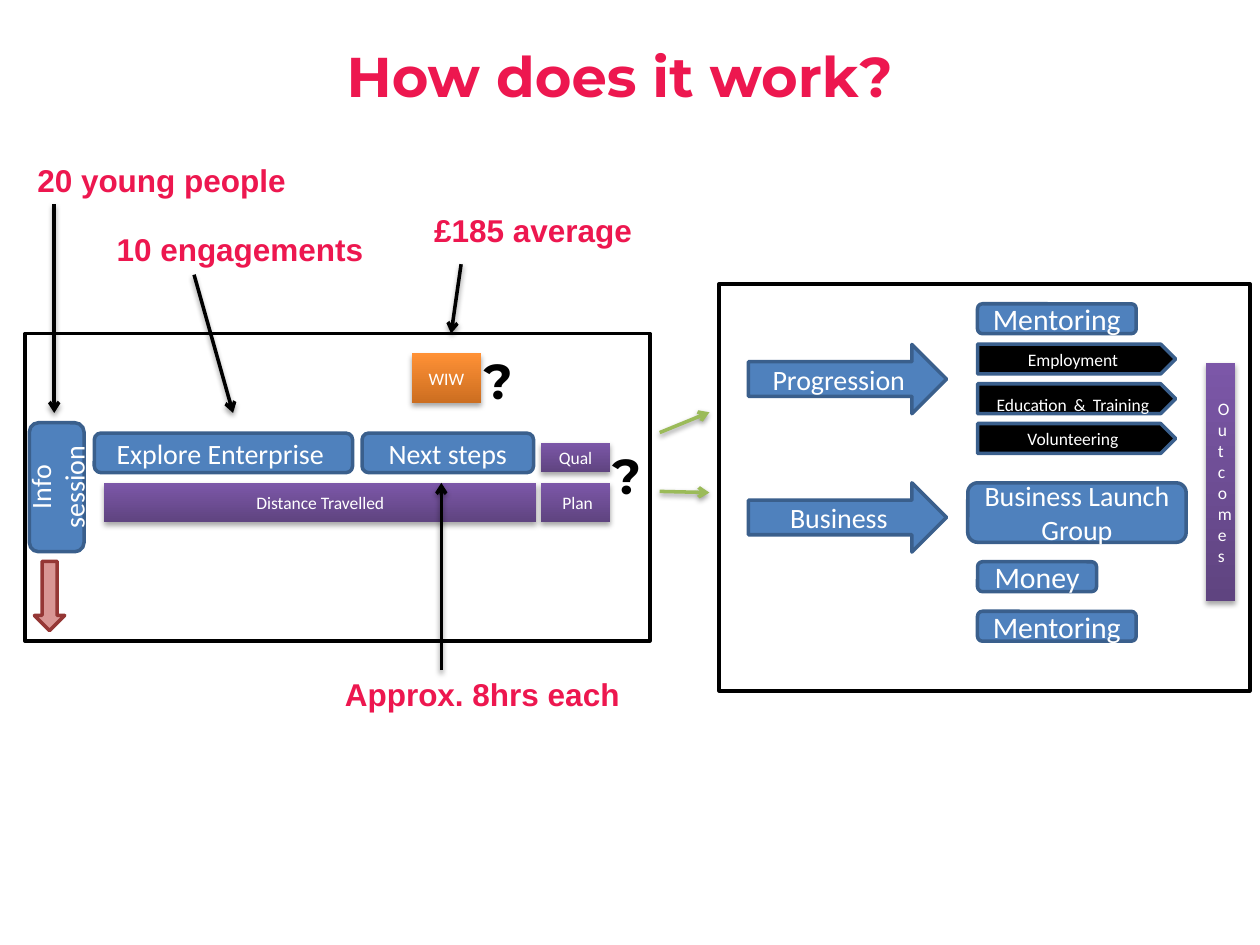
from lxml.etree import SubElement
from pptx import Presentation
from pptx.dml.color import RGBColor
from pptx.enum.shapes import MSO_CONNECTOR, MSO_SHAPE
from pptx.enum.text import MSO_ANCHOR, PP_ALIGN
from pptx.oxml.ns import qn
from pptx.util import Pt

COLOURS = {
    "white": "FFFFFF", "black": "000000", "pink": "ED174F",
    "blue": "4F81BD", "blue edge": "3A5F8C", "green": "9BBB59",
    "red": "D99694", "red edge": "953735",
    "purple": "7C57A8", "purple dark": "5F4480",
    "orange": "FF9136", "orange dark": "CC6E20",
}


def rgb(name):
    return RGBColor.from_string(COLOURS[name])


def format_text(frame, size, font, colour, bold=False, align=PP_ALIGN.CENTER):
    frame.word_wrap = True
    for paragraph in frame.paragraphs:
        paragraph.alignment = align
        for run in paragraph.runs:
            run.font.size = Pt(size)
            run.font.name = font
            run.font.bold = bold
            run.font.color.rgb = rgb(colour)


def add_shadow(element, opacity, distance):
    effects = SubElement(element.spPr, qn("a:effectLst"))
    shadow = SubElement(effects, qn("a:outerShdw"), blurRad=str(Pt(3.1)),
                        dist=str(Pt(distance)), dir="5400000", rotWithShape="0")
    black = SubElement(shadow, qn("a:srgbClr"), val=COLOURS["black"])
    SubElement(black, qn("a:alpha"), val=str(opacity * 1000))


def add_block(slide, preset, box, text="", size=16, fill="blue", edge="blue edge"):
    """Solid shape with an outline and centred white text."""
    block = slide.shapes.add_shape(preset, *map(Pt, box))
    block.shadow.inherit = False
    block.fill.solid()
    block.fill.fore_color.rgb = rgb(fill)
    block.line.color.rgb = rgb(edge)
    block.line.width = Pt(2)
    block.text_frame.text = text
    block.text_frame.vertical_anchor = MSO_ANCHOR.MIDDLE
    format_text(block.text_frame, size, "Calibri", "white")
    return block


def add_gradient_block(slide, box, text, hue="purple"):
    """Shadowed block shaded from dark at the bottom to light at the top."""
    block = slide.shapes.add_shape(MSO_SHAPE.RECTANGLE, *map(Pt, box))
    block.fill.gradient()
    block.fill.gradient_angle = 90
    dark, light = block.fill.gradient_stops
    dark.color.rgb, dark.position = rgb(hue + " dark"), 0
    light.color.rgb, light.position = rgb(hue), 1
    block.line.fill.background()
    add_shadow(block._element, 35, 1.8)
    block.text_frame.text = text
    block.text_frame.vertical_anchor = MSO_ANCHOR.MIDDLE
    format_text(block.text_frame, 10, "Calibri", "white")


def add_label(slide, box, text, size=18, font="Arial", colour="pink"):
    label = slide.shapes.add_textbox(*map(Pt, box))
    label.text_frame.text = text
    format_text(label.text_frame, size, font, colour, True, PP_ALIGN.LEFT)


def add_arrow(slide, start, end, colour="black"):
    arrow = slide.shapes.add_connector(MSO_CONNECTOR.STRAIGHT, *map(Pt, start + end))
    arrow.line.color.rgb = rgb(colour)
    arrow.line.width = Pt(2)
    SubElement(arrow.line._get_or_add_ln(), qn("a:tailEnd"), type="arrow")
    add_shadow(arrow._element, 38, 1.6)


def add_title(slide, text):
    title = slide.shapes.title
    title.left, title.top, title.width, title.height = map(Pt, (14.2, 20, 680, 46))
    title.text_frame.text = text
    title.text_frame.vertical_anchor = MSO_ANCHOR.TOP
    format_text(title.text_frame, 32, "Montserrat", "pink", True)


def add_engagement_stage(slide):
    # Steps of the programme
    info = add_block(slide, MSO_SHAPE.ROUNDED_RECTANGLE, (16.8, 241.6, 31.2, 73.7),
                     "Info session")
    info.text_frame._txBody.bodyPr.set("vert", "vert270")
    for left, width, step in ((53.9, 147.6, "Explore Enterprise "),
                              (206.9, 98, "Next steps")):
        add_block(slide, MSO_SHAPE.ROUNDED_RECTANGLE, (left, 247.5, width, 22.6), step)

    # Measures and awards
    add_gradient_block(slide, (59.5, 275.9, 247, 22.6), "Distance Travelled")
    add_gradient_block(slide, (309.1, 275.9, 39.6, 22.6), " Plan")
    add_gradient_block(slide, (309.1, 253, 39.6, 17), "Qual")
    add_gradient_block(slide, (235.3, 202, 39.6, 28.3), "WIW", "orange")

    # Drop-out arrow below the info session
    drop_out = add_block(slide, MSO_SHAPE.RIGHT_ARROW, (8.5, 331.9, 39.6, 17.3),
                         fill="red", edge="red edge")
    drop_out.rotation = 90

    # Open questions
    for left, top in ((342.7, 251.3), (269.3, 196.6)):
        add_label(slide, (left, top, 22.3, 41), "?", 28, "Montserrat", "black")


def add_routes_stage(slide):
    # Two routes
    for top, route in ((196.8, "Progression"), (275.9, "Business")):
        add_block(slide, MSO_SHAPE.RIGHT_ARROW, (427.7, top, 113.2, 39.6), route)

    # Progression destinations
    destinations = ("Employment", "Education & Training", "Volunteering")
    for row, destination in enumerate(destinations):
        plate = add_block(slide, MSO_SHAPE.PENTAGON,
                          (558.6, 196.6 + 22.7 * row, 113.2, 17.1),
                          fill="black")
        # Spaces between words are larger than the words
        paragraph = plate.text_frame.paragraphs[0]
        for word in destination.replace(" ", "| |").split("|"):
            paragraph.add_run().text = word
        format_text(plate.text_frame, 10, "Calibri", "white")
        for run in paragraph.runs:
            if run.text == " ":
                run.font.size = Pt(18)

    # Support on offer
    add_block(slide, MSO_SHAPE.ROUNDED_RECTANGLE, (553, 275.9, 124.8, 34),
              "Business Launch Group")
    for top, width, support in ((173.6, 90.7, "Mentoring"), (321, 68, "Money"),
                                (349.3, 90.7, "Mentoring")):
        add_block(slide, MSO_SHAPE.ROUNDED_RECTANGLE, (558.6, top, width, 17.1),
                  support, 17)

    add_gradient_block(slide, (688.9, 207.4, 16.8, 136), "Outcome\ns")


def add_annotations(slide):
    for box, text, start, end in (
        ((59.5, 128, 170, 29), "10 engagements", (110.9, 157), (133.2, 236)),
        ((14.2, 88.3, 181.4, 29), "20 young people", (31, 116.8), (31, 236)),
        ((190, 382.4, 175.7, 29), "Approx. 8hrs each", (252.2, 383), (252.2, 275.9)),
        ((241, 116.8, 158.4, 29), "£185 average", (263.5, 151), (257.8, 190.6)),
    ):
        add_label(slide, box, text)
        add_arrow(slide, start, end)


def main():
    deck = Presentation()
    deck.slide_width, deck.slide_height = Pt(720), Pt(540)
    slide = deck.slides.add_slide(deck.slide_layouts[5])
    add_title(slide, "How does it work?")

    # Frames of the two stages
    for frame in ((411, 162.2, 303.3, 232.6), (14.2, 190.6, 357.2, 175.7)):
        add_block(slide, MSO_SHAPE.RECTANGLE, frame, fill="white", edge="black")

    # Links from the first stage to the second
    for start, end in (((377, 247.2), (405.4, 235.6)), ((377, 280.8), (405.4, 281.5))):
        add_arrow(slide, start, end, "green")

    add_engagement_stage(slide)
    add_routes_stage(slide)
    add_annotations(slide)
    deck.save("out.pptx")


if __name__ == "__main__":
    main()
